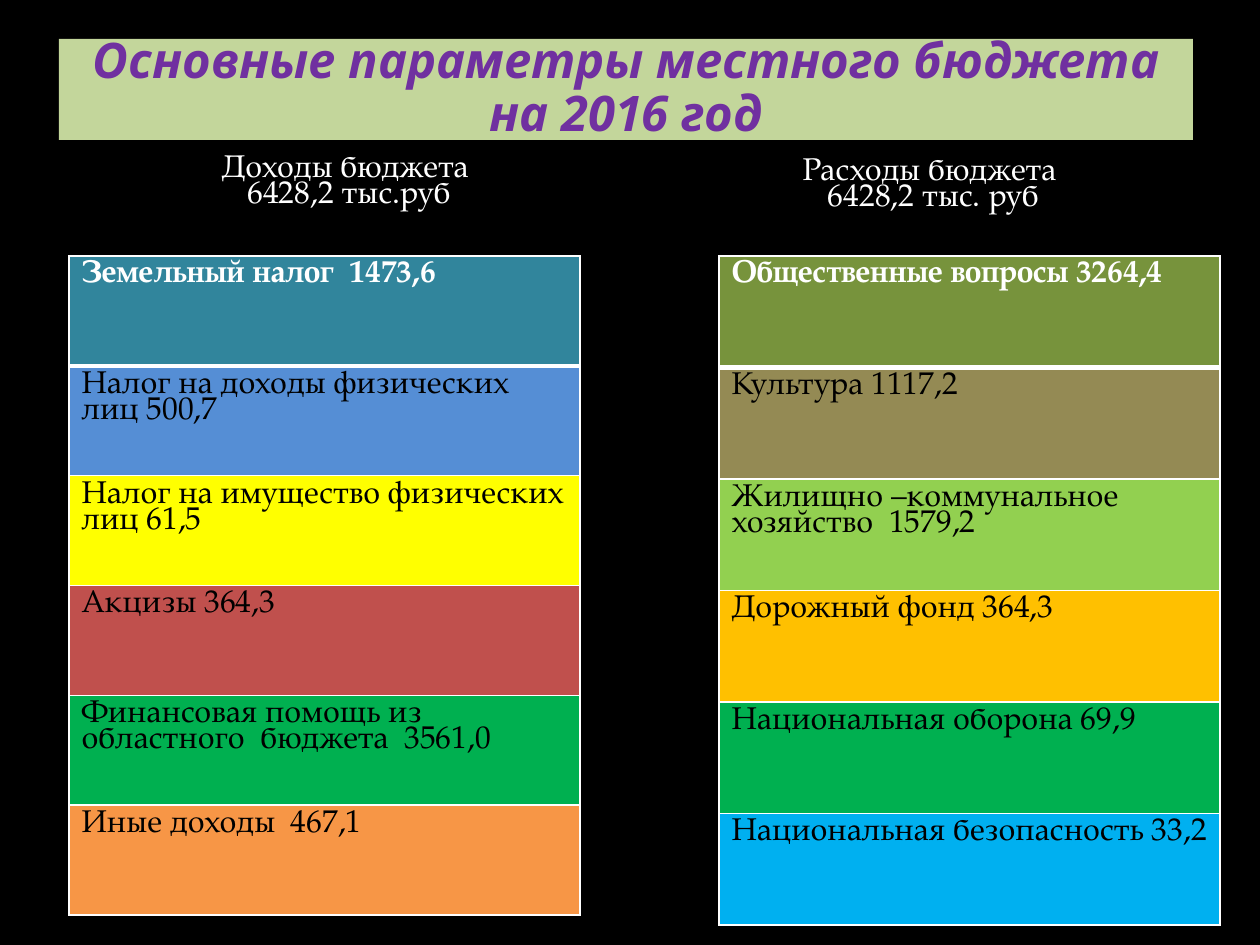
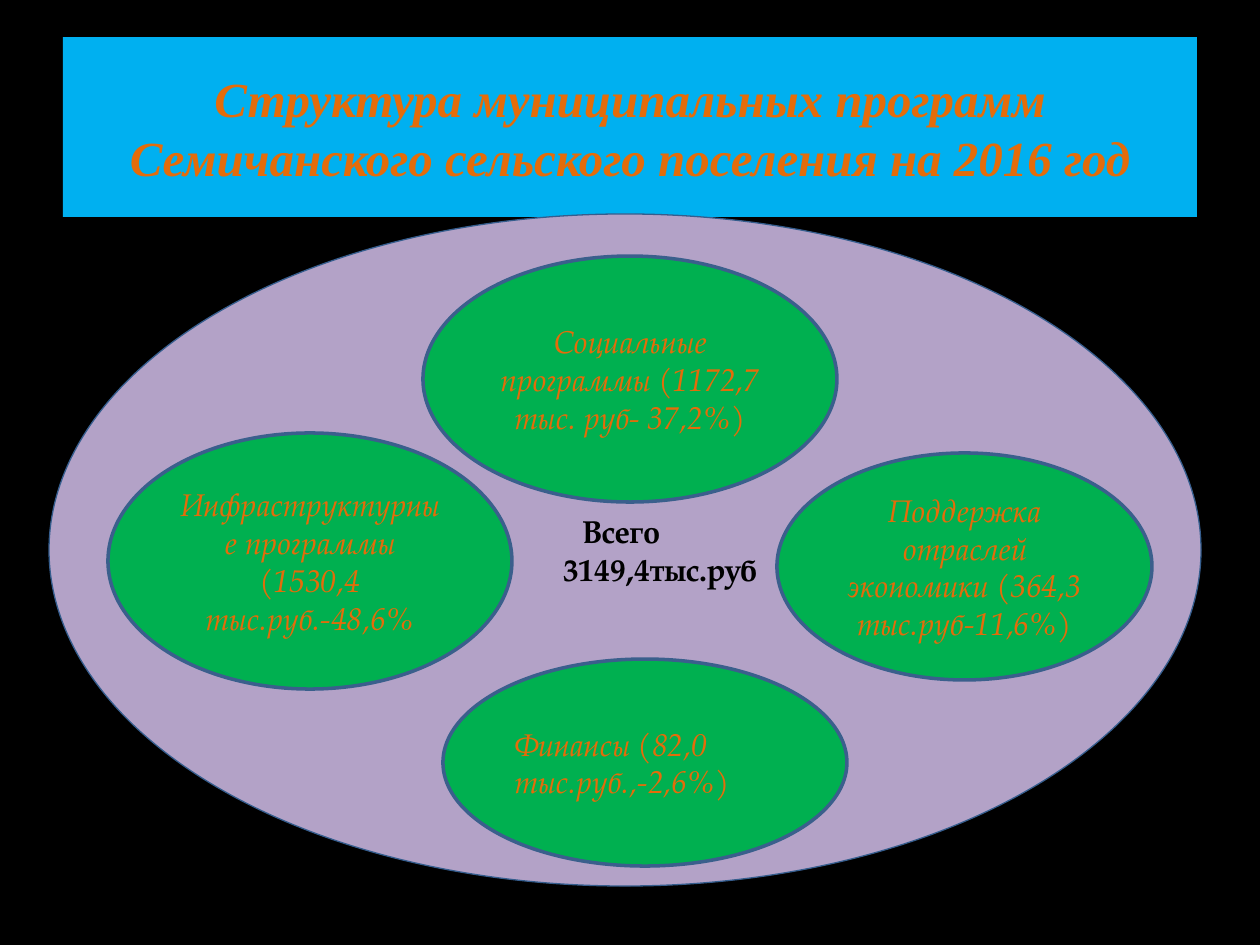
from pptx import Presentation
from pptx.dml.color import RGBColor
from pptx.enum.shapes import MSO_SHAPE
from pptx.enum.text import MSO_ANCHOR, PP_ALIGN
from pptx.oxml.ns import qn
from pptx.util import Pt
from lxml import etree

RECT, OVAL = MSO_SHAPE.RECTANGLE, MSO_SHAPE.OVAL
LEFT, MID = PP_ALIGN.LEFT, PP_ALIGN.CENTER
CENTER = MSO_ANCHOR.MIDDLE
SCALE = 914400 / 126
BODY = "TeX Gyre Pagella"
WHITE, BLACK, GREEN, ORANGE = "FFFFFF", "000000", "00B050", "E46C0A"
TIGHT = 0.83

# Content: boxes are left, top, width, height in px
HEADS = [
    ((65, 150, 568, 97), ["Доходы бюджета ", "6428,2 тыс.руб"]),
    ((648, 153, 563, 96), ["Расходы бюджета", " 6428,2 тыс. руб"]),
]
LISTS = [
    ((69, 256, 511, 659), [
        ("Земельный налог  1473,6", "31859C"),
        ("Налог на доходы физических лиц 500,7", "558ED5"),
        ("Налог на имущество физических лиц 61,5", "FFFF00"),
        ("Акцизы 364,3", "C0504D"),
        ("Финансовая помощь из областного  бюджета  3561,0", GREEN),
        ("Иные доходы  467,1", "F79646"),
    ]),
    ((719, 256, 501, 669), [
        ("Общественные вопросы 3264,4", "77933C"),
        ("Культура 1117,2", "948A54"),
        ("Жилищно –коммунальное  хозяйство  1579,2", "92D050"),
        ("Дорожный фонд 364,3", "FFC000"),
        ("Национальная оборона 69,9", GREEN),
        ("Национальная безопасность 33,2", "00B0F0"),
    ]),
]
TOTAL = ["Всего ", "3149,4тыс.руб"]
PLANS = [
    ((423, 256, 414, 246), "Социальные программы (1172,7 тыс. руб- 37,2%)", MID),
    ((108, 433, 404, 256), "Инфраструктурные программы (1530,4 тыс.руб.-48,6%", MID),
    ((443, 659, 404, 207), "Финансы (82,0 тыс.руб.,-2,6%)", LEFT),
    ((777, 453, 375, 227), "Поддержка отраслей экономики (364,3 тыс.руб-11,6%)", MID),
]


def px(num):
    return round(num * SCALE)


def rgb(code):
    return RGBColor.from_string(code)


def write(frame, lines, font=BODY, size=18, color=BLACK, bold=False,
          ital=False, align=LEFT, space=None):
    frame.word_wrap = True
    for i, line in enumerate(lines):
        para = frame.paragraphs[0] if i == 0 else frame.add_paragraph()
        para.alignment, para.line_spacing = align, space
        run = para.add_run()
        run.text = line
        face = run.font
        face.name, face.size = font, Pt(size)
        face.bold, face.italic = bold, ital
        face.color.rgb = rgb(color)


def shape(slide, kind, box, fill, lines, edge=None, **form):
    item = slide.shapes.add_shape(kind, *map(px, box))
    item.shadow.inherit = False
    item.fill.solid()
    item.fill.fore_color.rgb = rgb(fill)
    if edge:
        item.line.color.rgb, item.line.width = rgb(edge[0]), Pt(edge[1])
    else:
        item.line.fill.background()
    item.text_frame.vertical_anchor = CENTER
    write(item.text_frame, lines, **form)
    return item


def title(slide, box, fill, text, font, color, space=None):
    shape(slide, RECT, box, fill, [text], font=font, size=28, color=color,
          bold=True, ital=True, align=MID, space=space)


def edges(cell, **sides):
    props = cell._tc.get_or_add_tcPr()
    for side in "LRTB":
        wide = sides.get(side, sides["rest"])
        line = etree.SubElement(props, qn("a:ln" + side), w=str(Pt(wide)))
        if wide:
            fill = etree.SubElement(line, qn("a:solidFill"))
            etree.SubElement(fill, qn("a:srgbClr"), val=WHITE)
        else:
            etree.SubElement(line, qn("a:noFill"))


def table(slide, box, count):
    grid = slide.shapes.add_table(count, 1, *map(px, box)).table
    grid.first_row = grid.horz_banding = False
    for row in grid.rows:
        row.height = px(box[3] / count)
    return [grid.cell(i, 0) for i in range(count)]


def page(deck):
    slide = deck.slides.add_slide(deck.slide_layouts[6])
    slide.background.fill.solid()
    slide.background.fill.fore_color.rgb = rgb(BLACK)
    return slide


def budget(deck):
    slide = page(deck)
    title(slide, (59, 39, 1134, 101), "C3D69B",
          "Основные параметры местного бюджета на 2016 год",
          "Open Sans", "7030A0", 0.9)
    # Totals above the lists
    for box, lines in HEADS:
        cell = table(slide, box, 1)[0]
        edges(cell, rest=0)
        cell.fill.background()
        write(cell.text_frame, lines, color=WHITE, align=MID, space=TIGHT)
    # Income and spending lists, with a thick rule below the first row
    for box, rows in LISTS:
        for i, cell in enumerate(table(slide, box, len(rows))):
            text, fill = rows[i]
            top = i == 0
            edges(cell, rest=1, B=3 if top else 1, T=3 if i == 1 else 1)
            cell.fill.solid()
            cell.fill.fore_color.rgb = rgb(fill)
            write(cell.text_frame, [text], color=WHITE if top else BLACK,
                  bold=top, space=TIGHT)


def plans(deck):
    slide = page(deck)
    title(slide, (63, 37, 1134, 180), "00B0F0",
          "Структура муниципальных программ Семичанского сельского "
          "поселения на 2016 год", "Times New Roman", ORANGE)
    # Whole sum, its second line indented
    whole = shape(slide, OVAL, (49, 214, 1152, 672), "B3A2C7", TOTAL,
                  edge=("355D8D", 0.75), bold=True, align=MID)
    last = whole.text_frame.paragraphs[1]._p.get_or_add_pPr()
    last.set("marL", str(px(70)))
    # Programme groups
    for box, text, align in PLANS:
        shape(slide, OVAL, box, GREEN, [text], edge=("3A5F8C", 2),
              color=ORANGE, ital=True, align=align)


def main():
    deck = Presentation()
    deck.slide_width, deck.slide_height = px(1260), px(945)
    budget(deck)
    plans(deck)
    deck.save("out.pptx")


if __name__ == "__main__":
    main()
